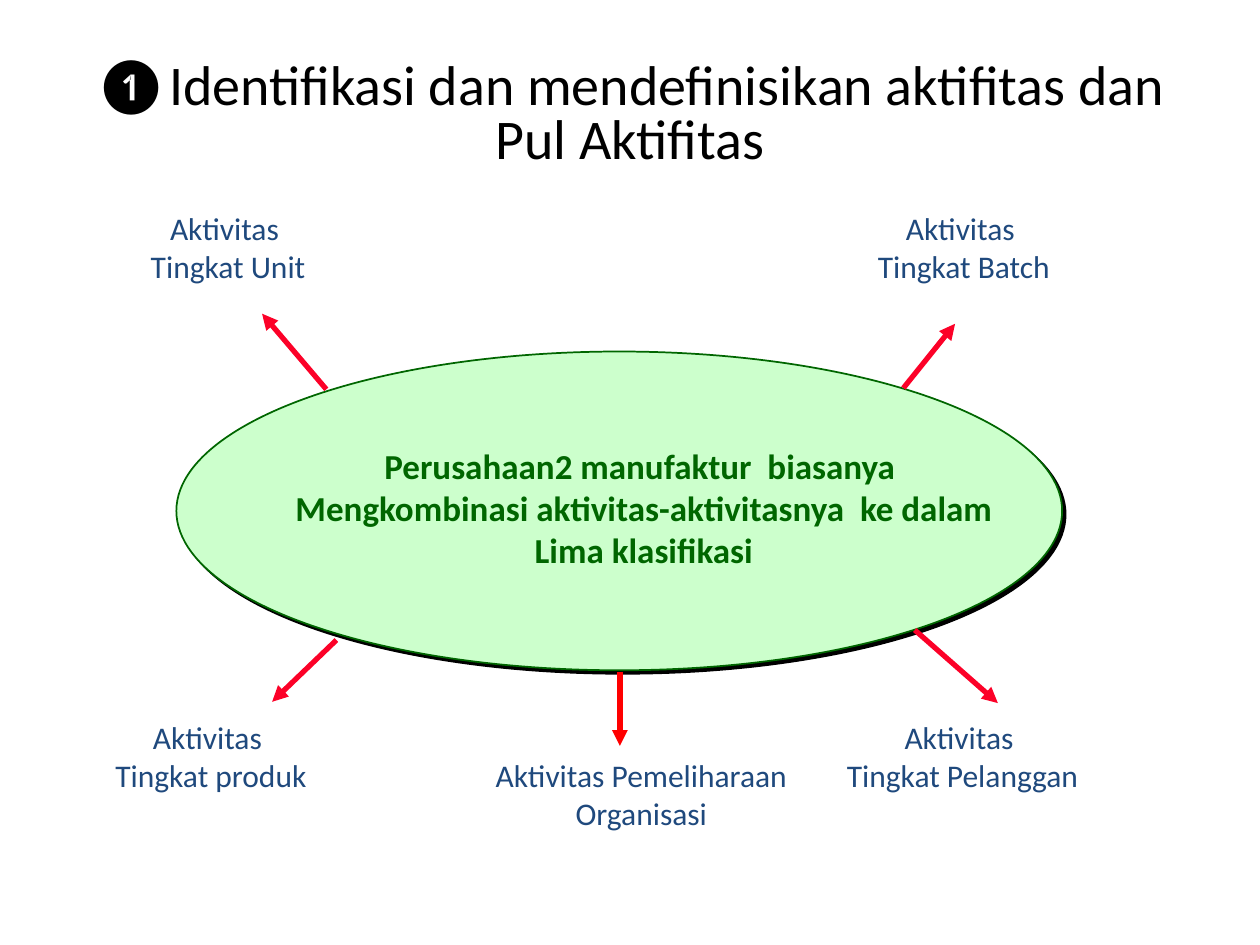
import lxml.etree
import pptx
import pptx.dml.color
import pptx.enum.shapes
import pptx.enum.text
import pptx.oxml
import pptx.oxml.ns
import pptx.util

Inches = pptx.util.Inches
Pt = pptx.util.Pt
RGBColor = pptx.dml.color.RGBColor
qn = pptx.oxml.ns.qn

BLACK = RGBColor(0x00, 0x00, 0x00)
NAVY = RGBColor(0x1F, 0x49, 0x7D)
GREEN = RGBColor(0x00, 0x66, 0x00)
MINT = RGBColor(0xCC, 0xFF, 0xCC)
CRIMSON = RGBColor(0xFC, 0x01, 0x28)
RED = RGBColor(0xFF, 0x00, 0x00)

CORE_LINES = [
    "Perusahaan2 manufaktur  biasanya ",
    "Mengkombinasi aktivitas-aktivitasnya  ke dalam",
    "Lima klasifikasi",
]
# Each level: lines, label box, arrow start, arrow end, arrow colour.
LEVELS = [
    (["Aktivitas ", "Tingkat Unit"], (0.28, 0, 1.44, 0.7), (1.78, 1.48), (1.27, 0.88), CRIMSON),
    (["Aktivitas ", "Tingkat Batch"], (6.05, 0, 1.58, 0.7), (6.36, 1.47), (6.77, 0.96), CRIMSON),
    (["Aktivitas ", "Tingkat produk"], (0, 4.04, 1.73, 0.7), (1.86, 3.47), (1.35, 3.96), CRIMSON),
    (["Aktivitas ", "Tingkat Pelanggan"], (5.8, 4.04, 2.06, 0.7), (6.45, 3.39), (7.11, 3.97), CRIMSON),
    (["Aktivitas Pemeliharaan", "Organisasi"], (3.01, 4.34, 2.54, 0.7), (4.11, 3.72), (4.11, 4.31), RED),
]


def add_text(slide, lines, left, top, width, height, *, size, color, bold=False,
             wrap=False, spacing=None, anchor=pptx.enum.text.MSO_ANCHOR.TOP):
    """Add a centred text box with one paragraph for each line."""
    box = slide.shapes.add_textbox(left, top, width, height)
    frame = box.text_frame
    frame.word_wrap = wrap
    frame.vertical_anchor = anchor
    for index, line in enumerate(lines):
        paragraph = frame.add_paragraph() if index else frame.paragraphs[0]
        paragraph.alignment = pptx.enum.text.PP_ALIGN.CENTER
        paragraph.line_spacing = spacing
        run = paragraph.add_run()
        run.text = line
        run.font.name = "Calibri"
        run.font.size = Pt(size)
        run.font.bold = bold
        run.font.color.rgb = color
    return box


def add_arrow(slide, left, top, start, end, color):
    """Draw an arrow between two points measured from left and top."""
    arrow = slide.shapes.add_connector(
        pptx.enum.shapes.MSO_CONNECTOR.STRAIGHT,
        left + Inches(start[0]), top + Inches(start[1]),
        left + Inches(end[0]), top + Inches(end[1]))
    arrow.line.color.rgb = color
    arrow.line.width = Pt(3)
    outline = arrow.line._get_or_add_ln()
    lxml.etree.SubElement(outline, qn("a:tailEnd"), type="triangle")
    lxml.etree.SubElement(arrow._element.spPr, qn("a:effectLst"))


def add_hard_shadow(shape, color):
    """Give a shape a sharp shadow to the lower right."""
    shape.shadow.inherit = False
    effects = shape._element.spPr.find(qn("a:effectLst"))
    shadow = lxml.etree.SubElement(
        effects, qn("a:outerShdw"), dist=str(Pt(2.8)), dir="2700000",
        algn="ctr", rotWithShape="0")
    lxml.etree.SubElement(shadow, qn("a:srgbClr"), val=str(color))


def add_title(slide, left, top, width, height):
    """Place the slide heading."""
    add_text(slide, ["❶Identifikasi dan mendefinisikan aktifitas dan Pul Aktifitas"],
             left, top, width, height, size=32, color=BLACK, wrap=True, spacing=0.8,
             anchor=pptx.enum.text.MSO_ANCHOR.MIDDLE)


def add_core(slide, left, top, width, height):
    """Place the ellipse with its statement."""
    ellipse = slide.shapes.add_shape(
        pptx.enum.shapes.MSO_SHAPE.OVAL, left, top, width, height)
    ellipse.fill.solid()
    ellipse.fill.fore_color.rgb = MINT
    ellipse.line.color.rgb = GREEN
    ellipse.line.width = Pt(1)
    add_hard_shadow(ellipse, BLACK)
    add_text(slide, CORE_LINES, left + Inches(0.82), top + Inches(0.69),
             Inches(5.78), Inches(1.11), size=20, color=GREEN, bold=True)


def add_diagram(slide, left, top):
    """Place the core and the five activity levels around it."""
    add_core(slide, left + Inches(0.59), top + Inches(1.18), Inches(7.03), Inches(2.53))
    for lines, (x, y, width, height), start, end, color in LEVELS:
        add_text(slide, lines, left + Inches(x), top + Inches(y),
                 Inches(width), Inches(height), size=18, color=NAVY)
        add_arrow(slide, left, top, start, end, color)


def main():
    """Build and save the slide."""
    deck = pptx.Presentation()
    deck.slide_width = Inches(10)
    deck.slide_height = Inches(7.5)
    slide = deck.slides.add_slide(deck.slide_layouts[6])
    add_title(slide, Inches(0.5), Inches(0.3), Inches(9), Inches(1.25))
    add_diagram(slide, Inches(0.81), Inches(1.61))
    deck.save("out.pptx")


if __name__ == "__main__":
    main()
